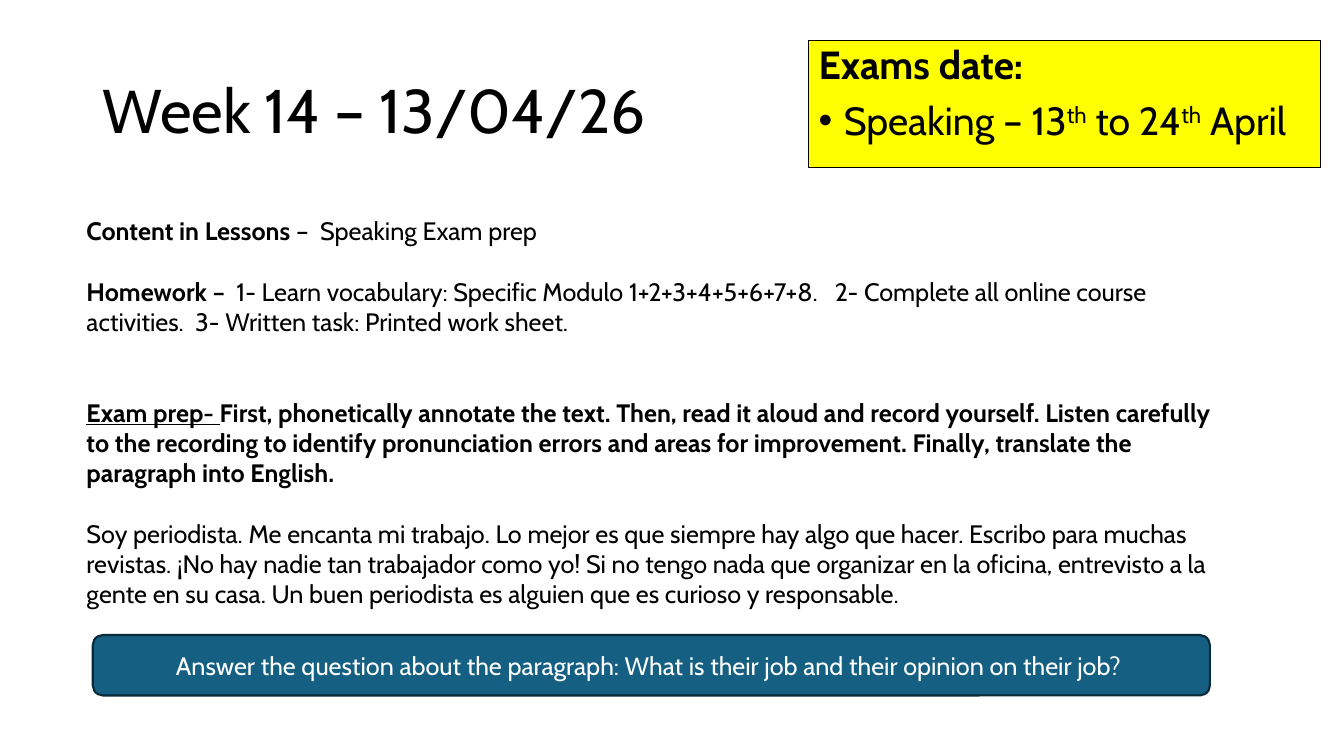
from pptx import Presentation
from pptx.dml.color import RGBColor
from pptx.enum.shapes import MSO_SHAPE
from pptx.enum.text import MSO_ANCHOR, PP_ALIGN
from pptx.oxml.ns import qn
from pptx.util import Inches, Pt
from lxml import etree

# Content: each paragraph is a list of (text, styles) runs
TITLE = [("Week 14 – 13/04/26", "")]
LESSON = [
    [("Content in Lessons ", "bold"), ("–  Speaking Exam prep", "")],
    [("Homework –  ", "bold"),
     ("1- Learn vocabulary: Specific Modulo 1+2+3+4+5+6+7+8.   "
      "2- Complete all online course activities.  "
      "3- Written task: Printed work sheet.", "")],
    [("Exam prep- ", "bold underline"),
     ("First, phonetically annotate the text. Then, read it aloud and record "
      "yourself. Listen carefully to the recording to identify pronunciation "
      "errors and areas for improvement. Finally, translate the paragraph "
      "into English.", "bold")],
    [("Soy periodista. Me encanta mi trabajo. Lo mejor es que siempre hay algo "
      "que hacer. Escribo para muchas revistas. ¡No hay nadie tan trabajador "
      "como yo! Si no tengo nada que organizar en la oficina, entrevisto a la "
      "gente en su casa. Un buen periodista es alguien que es curioso y "
      "responsable.", "")],
]
LINES_BEFORE = [0, 1, 2, 1]
EXAMS = [
    [("Exams date:", "bold")],
    [("Speaking – 13", ""), ("th", "super"), (" to 24", ""),
     ("th", "super"), (" April", "")],
]
QUESTION = [("Answer the question about the paragraph: "
             "What is their job and their opinion on their job? ", "")]

FONT = "Cabin"
LINE_HEIGHT = 21.6  # points, one line of 18 pt text
COLOURS = {"text": "000000", "note": "FFFF00", "banner": "156082",
           "banner_line": "092A39", "banner_text": "FFFFFF"}


def colour(name):
    return RGBColor.from_string(COLOURS[name])


def write(shape, paragraphs, size, text_colour="text", spacing=None,
          anchor=MSO_ANCHOR.TOP, align=PP_ALIGN.LEFT):
    frame = shape.text_frame
    frame.word_wrap = True
    frame.vertical_anchor = anchor
    for index, pieces in enumerate(paragraphs):
        paragraph = frame.paragraphs[0] if index == 0 else frame.add_paragraph()
        paragraph.alignment = align
        if spacing:
            paragraph.line_spacing = spacing
        for text, styles in pieces:
            run = paragraph.add_run()
            run.text = text
            run.font.name = FONT
            run.font.size = Pt(size)
            run.font.color.rgb = colour(text_colour)
            run.font.bold = "bold" in styles
            run.font.underline = "underline" in styles
            if "super" in styles:
                run._r.get_or_add_rPr().set("baseline", "30000")
    return frame.paragraphs


def add_panel(kind, box, fill, line, width):
    panel = slide.shapes.add_shape(kind, *map(Inches, box))
    panel.shadow.inherit = False
    panel.fill.solid()
    panel.fill.fore_color.rgb = colour(fill)
    panel.line.color.rgb = colour(line)
    panel.line.width = Pt(width)
    return panel


def add_bullet(paragraph):
    properties = paragraph._p.get_or_add_pPr()
    properties.set("marL", str(Inches(0.25)))
    properties.set("indent", str(-Inches(0.25)))
    etree.SubElement(properties, qn("a:buFont")).set("typeface", "Arial")
    etree.SubElement(properties, qn("a:buChar")).set("char", "•")


prs = Presentation()
prs.slide_width, prs.slide_height = Inches(13.33), Inches(7.5)
slide = prs.slides.add_slide(prs.slide_layouts[6])

# Week title
title = slide.shapes.add_textbox(*map(Inches, (0.92, 0.4, 11.5, 1.45)))
write(title, [TITLE], 44, spacing=0.9, anchor=MSO_ANCHOR.MIDDLE)

# Lesson content, homework and exam preparation
lesson = slide.shapes.add_textbox(*map(Inches, (0.76, 2.09, 11.5, 4.34)))
for paragraph, lines in zip(write(lesson, LESSON, 18), LINES_BEFORE):
    if lines:
        paragraph.space_before = Pt(lines * LINE_HEIGHT)

# Exam dates note
exams = add_panel(MSO_SHAPE.RECTANGLE, (8.02, 0.4, 5.08, 1.26),
                  "note", "text", 0.75)
speaking = write(exams, EXAMS, 28, spacing=0.9)[1]
speaking.space_before = Pt(10)
add_bullet(speaking)

# Question banner
question = add_panel(MSO_SHAPE.ROUNDED_RECTANGLE, (0.92, 6.3, 11.08, 0.6),
                     "banner", "banner_line", 1.5)
write(question, [QUESTION], 18, "banner_text",
      anchor=MSO_ANCHOR.MIDDLE, align=PP_ALIGN.CENTER)

prs.save("out.pptx")
